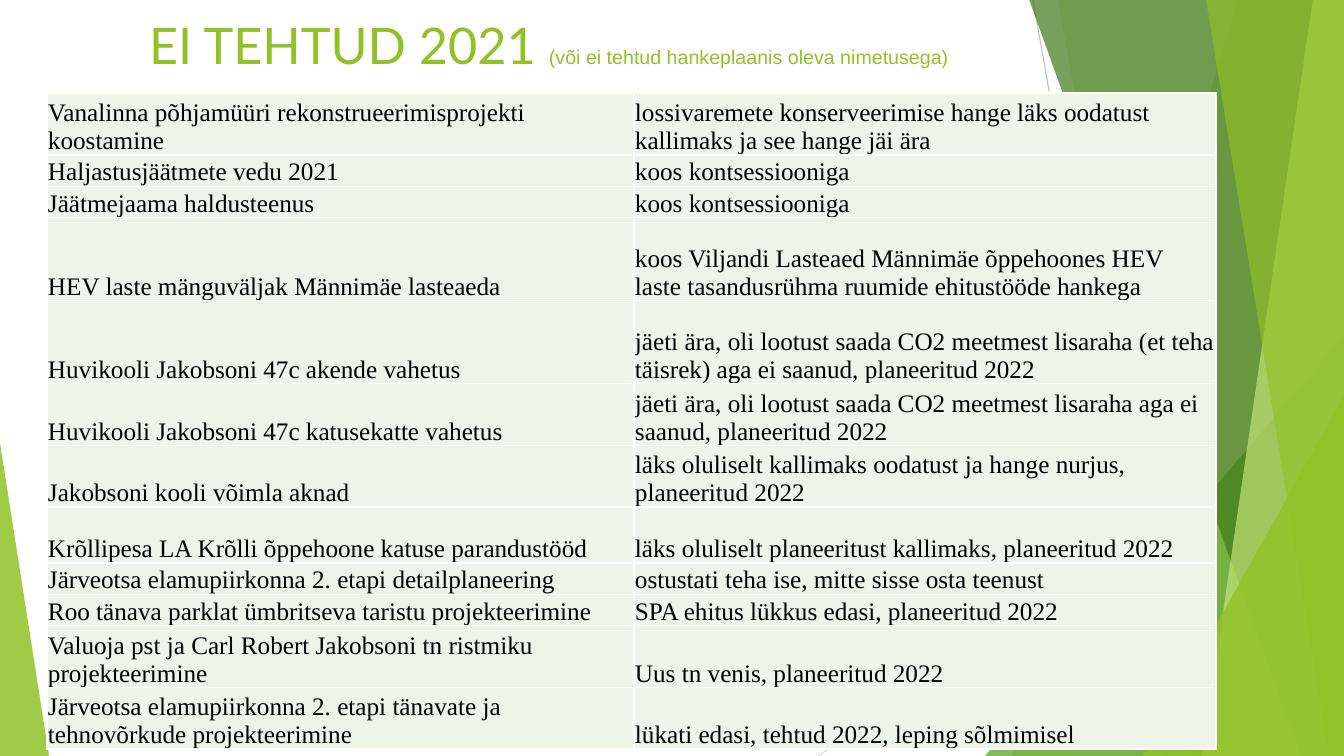
import pptx
import pptx.util
import pptx.dml.color
import pptx.enum.shapes
import pptx.enum.text
import pptx.oxml
import pptx.oxml.ns
import lxml.etree

PX = 12192000 / 1344
WIDTH, HEIGHT = 1344, 756
GREEN = "90C226"


def px(length):
    return pptx.util.Emu(round(length * PX))


def paint(fill, color, alpha=100):
    fill.solid()
    fill.fore_color.rgb = pptx.dml.color.RGBColor.from_string(color)
    if alpha < 100:
        tint = fill._xPr.find(".//" + pptx.oxml.ns.qn("a:srgbClr"))
        lxml.etree.SubElement(tint, pptx.oxml.ns.qn("a:alpha"), val=str(alpha * 1000))


deck = pptx.Presentation()
deck.slide_width = px(WIDTH)
deck.slide_height = px(HEIGHT)
page = deck.slides.add_slide(deck.slide_layouts[6])

for x1, y1, x2, y2, color in [
    (1033, 0, 1167, HEIGHT, "BFBFBF"),
    (WIDTH, 406, 818, HEIGHT, "D9D9D9"),
]:
    line = page.shapes.add_connector(
        pptx.enum.shapes.MSO_CONNECTOR.STRAIGHT, px(x1), px(y1), px(x2), px(y2)
    )
    paint(line.line.fill, color)
    line.line.width = pptx.util.Pt(0.75)
    lxml.etree.SubElement(line._element.spPr, pptx.oxml.ns.qn("a:effectLst"))

facets = [
    ("band", 1238, 1012, GREEN, 30),
    ("band", 1058, 1192, GREEN, 20),
    ("triangle", (985, 336, 359, 420), 1, "54A021", 72),
    ("band", 1029, 1301, "3F7819", 70),
    ("band", 1313, 1202, "C0E474", 70),
    ("band", 1206, 1329, GREEN, 65),
    ("triangle", (1143, 396, 201, 360), 1, GREEN, 80),
    ("triangle", (0, 443, 49, 313), 0, GREEN, 85),
]
for kind, first, second, color, alpha in facets:
    if kind == "band":
        outline = page.shapes.build_freeform(first, -1, PX)
        outline.add_line_segments([(WIDTH, -1), (WIDTH, HEIGHT), (second, HEIGHT)])
        facet = outline.convert_to_shape()
    else:
        facet = page.shapes.add_shape(
            pptx.enum.shapes.MSO_SHAPE.ISOSCELES_TRIANGLE, *map(px, first)
        )
        facet.adjustments[0] = second
    facet.shadow.inherit = False
    facet.line.fill.background()
    paint(facet.fill, color, alpha)

title = page.shapes.add_textbox(px(75), px(9), px(948), px(204))
title.text_frame.word_wrap = True
para = title.text_frame.paragraphs[0]
para.alignment = pptx.enum.text.PP_ALIGN.CENTER
for text, size, font in [
    ("EI TEHTUD 2021 ", 36, "Lato"),
    ("(või ei tehtud hankeplaanis oleva nimetusega)", 14, "Arial"),
]:
    span = para.add_run()
    span.text = text
    span.font.size = pptx.util.Pt(size)
    span.font.name = font
    paint(span.font.fill, GREEN)

rows = [
    (62, "Vanalinna põhjamüüri rekonstrueerimisprojekti koostamine",
     "lossivaremete konserveerimise hange läks oodatust kallimaks ja see hange jäi ära"),
    (31, "Haljastusjäätmete vedu 2021", "koos kontsessiooniga"),
    (31, "Jäätmejaama haldusteenus", "koos kontsessiooniga"),
    (83, "HEV laste mänguväljak Männimäe lasteaeda",
     "koos Viljandi Lasteaed Männimäe õppehoones HEV laste tasandusrühma ruumide ehitustööde hankega"),
    (83, "Huvikooli Jakobsoni 47c akende vahetus",
     "jäeti ära, oli lootust saada CO2 meetmest lisaraha (et teha täisrek) aga ei saanud, planeeritud 2022"),
    (62, "Huvikooli Jakobsoni 47c katusekatte vahetus",
     "jäeti ära, oli lootust saada CO2 meetmest lisaraha aga ei saanud, planeeritud 2022"),
    (61, "Jakobsoni kooli võimla aknad",
     "läks oluliselt kallimaks oodatust ja hange nurjus, planeeritud 2022"),
    (56, "Krõllipesa LA Krõlli õppehoone katuse parandustööd",
     "läks oluliselt planeeritust kallimaks, planeeritud 2022"),
    (31, "Järveotsa elamupiirkonna 2. etapi detailplaneering",
     "ostustati teha ise, mitte sisse osta teenust"),
    (31, "Roo tänava parklat ümbritseva taristu projekteerimine",
     "SPA ehitus lükkus edasi, planeeritud 2022"),
    (62, "Valuoja pst ja Carl Robert Jakobsoni tn ristmiku projekteerimine",
     "Uus tn venis, planeeritud 2022"),
    (61, "Järveotsa elamupiirkonna 2. etapi tänavate ja tehnovõrkude projekteerimine",
     "lükati edasi, tehtud 2022, leping sõlmimisel"),
]
widths = [587, 582]
table = page.shapes.add_table(
    len(rows), len(widths), px(47), px(93), px(sum(widths)), px(sum(row[0] for row in rows))
).table
table.first_row = False
table.horz_banding = False
for column, width in zip(table.columns, widths):
    column.width = px(width)
for row_number, (height, *texts) in enumerate(rows):
    table.rows[row_number].height = px(height)
    for column_number, text in enumerate(texts):
        cell = table.cell(row_number, column_number)
        cell.margin_left = cell.margin_right = cell.margin_top = px(1)
        cell.margin_bottom = 0
        cell.vertical_anchor = pptx.enum.text.MSO_ANCHOR.BOTTOM
        paint(cell.fill, "EEF4E8")
        for position, side in enumerate(["lnL", "lnR", "lnT", "lnB"]):
            border = pptx.oxml.parse_xml(
                f'<a:{side} {pptx.oxml.ns.nsdecls("a")} w="12700">'
                f'<a:solidFill><a:srgbClr val="FFFFFF"/></a:solidFill></a:{side}>'
            )
            cell._tc.get_or_add_tcPr().insert(position, border)
        span = cell.text_frame.paragraphs[0].add_run()
        span.text = text
        span.font.size = pptx.util.Pt(18)
        span.font.name = "Times New Roman"
        paint(span.font.fill, "000000")

deck.save("out.pptx")
